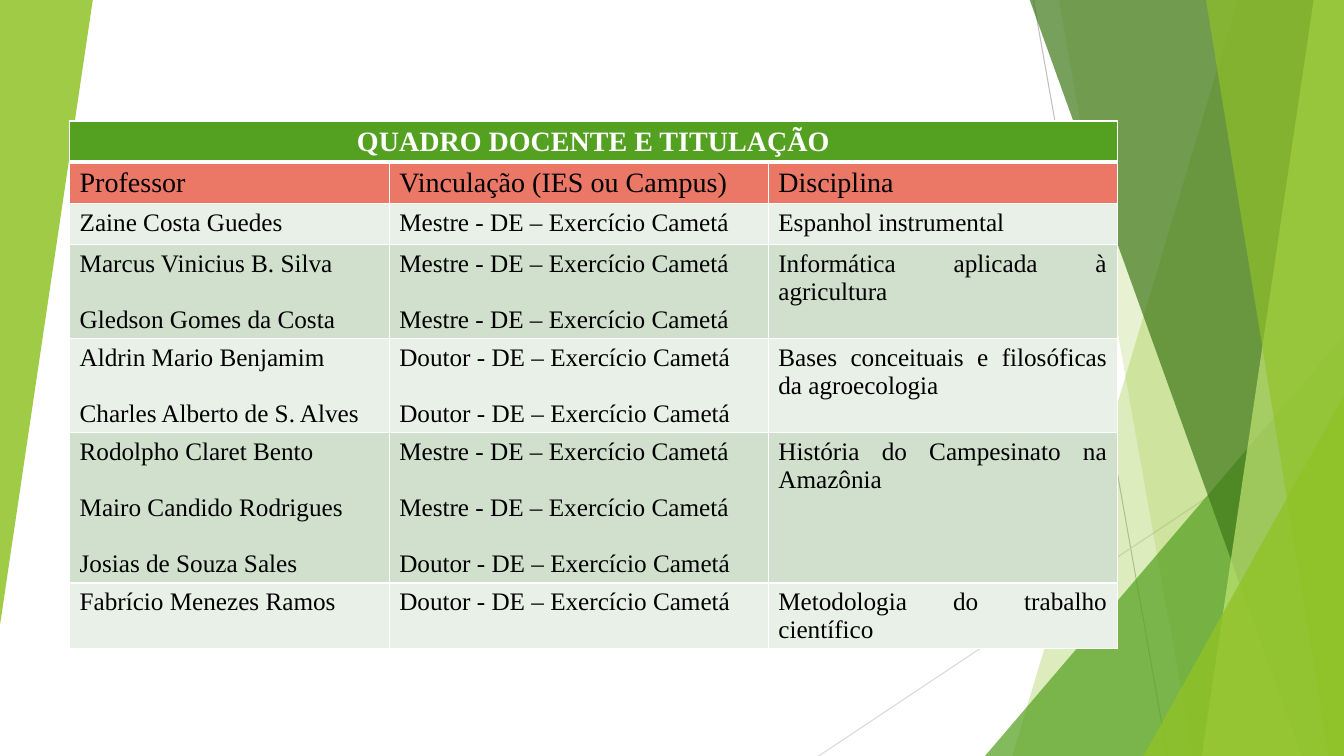
from lxml import etree
from pptx import Presentation
from pptx.dml.color import RGBColor
from pptx.enum.shapes import MSO_CONNECTOR, MSO_SHAPE
from pptx.enum.text import PP_ALIGN
from pptx.oxml import parse_xml
from pptx.oxml.ns import nsdecls, qn
from pptx.util import Inches, Pt

WHITE = RGBColor(0xFF, 0xFF, 0xFF)
BLACK = RGBColor(0x00, 0x00, 0x00)
LIME = RGBColor(0x90, 0xC2, 0x26)
PALE_LIME = RGBColor(0xC0, 0xE4, 0x74)
GREEN = RGBColor(0x54, 0xA0, 0x21)
DARK_GREEN = RGBColor(0x3F, 0x78, 0x19)
CORAL = RGBColor(0xEB, 0x77, 0x66)
BAND_LIGHT = RGBColor(0xE9, 0xF0, 0xE8)
BAND_DARK = RGBColor(0xD1, 0xDF, 0xCD)
GRAY = RGBColor(0xBF, 0xBF, 0xBF)
LIGHT_GRAY = RGBColor(0xD9, 0xD9, 0xD9)

WIDTH, HEIGHT, TOP = 13.33, 7.5, -0.01
MESTRE = "Mestre - DE – Exercício Cametá"
DOUTOR = "Doutor - DE – Exercício Cametá"

HEADINGS = ["Professor", "Vinculação (IES ou Campus)", "Disciplina"]
# Professors, their degrees, subject
STAFF = [
    (["Zaine Costa Guedes"], [MESTRE], "Espanhol instrumental"),
    (["Marcus Vinicius B. Silva", "Gledson Gomes da Costa"],
     [MESTRE, MESTRE], "Informática aplicada à agricultura"),
    (["Aldrin Mario Benjamim", "Charles Alberto de S. Alves"],
     [DOUTOR, DOUTOR], "Bases conceituais e filosóficas da agroecologia"),
    (["Rodolpho Claret Bento", "Mairo Candido Rodrigues", "Josias de Souza Sales"],
     [MESTRE, MESTRE, DOUTOR], "História do Campesinato na Amazônia"),
    (["Fabrício Menezes Ramos"], [DOUTOR], "Metodologia do trabalho científico"),
]
COL_WIDTHS = [3.17, 3.76, 3.46]
ROW_HEIGHTS = [0.41, 0.41, 0.41, 0.93, 0.93, 1.49, 0.65]


class SlideBuilder:
    font = "Times New Roman"

    def __init__(self, slide):
        self.s = slide

    def line(self, start, end, color):
        ends = [Inches(v) for v in (*start, *end)]
        ln = self.s.shapes.add_connector(MSO_CONNECTOR.STRAIGHT, *ends)
        ln.line.color.rgb = color
        ln.line.width = Pt(0.75)
        etree.SubElement(ln._element.spPr, qn("a:effectLst"))

    def paint(self, sp, color, opacity):
        sp.shadow.inherit = False
        sp.line.fill.background()
        sp.fill.solid()
        sp.fill.fore_color.rgb = color
        clr = sp._element.spPr.find(qn("a:solidFill"))[0]
        etree.SubElement(clr, qn("a:alpha")).set("val", str(opacity * 1000))

    def facet(self, top_x, bottom_x, color, opacity):
        """Band from a slanted left edge to the right side of the slide."""
        pts = [(top_x, TOP), (WIDTH, TOP), (WIDTH, HEIGHT), (bottom_x, HEIGHT)]
        pts = [(Inches(x), Inches(y)) for x, y in pts]
        fb = self.s.shapes.build_freeform(*pts[0])
        fb.add_line_segments(pts[1:], close=True)
        self.paint(fb.convert_to_shape(), color, opacity)

    def triangle(self, box, color, opacity, rotation=0):
        sp = self.s.shapes.add_shape(MSO_SHAPE.ISOSCELES_TRIANGLE,
                                     *[Inches(v) for v in box])
        sp.adjustments[0] = 1
        sp.rotation = rotation
        self.paint(sp, color, opacity)

    def table(self, left, top, widths, heights):
        box = [Inches(v) for v in (left, top, sum(widths), sum(heights))]
        tbl = self.s.shapes.add_table(len(heights), len(widths), *box).table
        tbl.first_row = tbl.horz_banding = False
        for col, width in zip(tbl.columns, widths):
            col.width = Inches(width)
        for row, height in zip(tbl.rows, heights):
            row.height = Inches(height)
        return tbl

    def borders(self, cell, top=1, bottom=1):
        tcPr = cell._tc.get_or_add_tcPr()
        for side, width in {"L": 1, "R": 1, "T": top, "B": bottom}.items():
            tcPr.append(parse_xml(
                f'<a:ln{side} {nsdecls("a")} w="{Pt(width)}"><a:solidFill>'
                f'<a:srgbClr val="{WHITE}"/></a:solidFill></a:ln{side}>'))

    def cell(self, cell, lines, fill, size=18, color=BLACK, bold=False,
             align=PP_ALIGN.JUSTIFY):
        cell.fill.solid()
        cell.fill.fore_color.rgb = fill
        tf = cell.text_frame
        style = {"name": self.font, "size": Pt(size), "bold": bold}
        for i, text in enumerate(lines):
            p = tf.add_paragraph() if i else tf.paragraphs[0]
            p.alignment = align
            if i:
                p.space_before = Pt(20)
            r = p.add_run()
            r.text = text
            for name, value in style.items():
                setattr(r.font, name, value)
            r.font.color.rgb = color


def main():
    prs = Presentation()
    prs.slide_width, prs.slide_height = Inches(WIDTH), Inches(HEIGHT)
    b = SlideBuilder(prs.slides.add_slide(prs.slide_layouts[6]))

    # Background facets
    b.line((10.25, 0), (11.58, HEIGHT), GRAY)
    b.line((WIDTH, 4.03), (8.12, HEIGHT), LIGHT_GRAY)
    b.facet(12.28, 10.04, LIME, 30)
    b.facet(10.5, 11.83, LIME, 20)
    b.triangle((9.77, 3.33, 3.56, 4.17), GREEN, 72)
    b.facet(10.21, 12.91, DARK_GREEN, 70)
    b.facet(13.03, 11.92, PALE_LIME, 70)
    b.facet(11.96, 13.18, LIME, 65)
    b.triangle((11.34, 3.93, 1.99, 3.57), LIME, 80)
    b.triangle((0, 0, 0.92, 6.2), LIME, 85, rotation=180)

    # Table frame and borders
    tbl = b.table(0.69, 1.2, COL_WIDTHS, ROW_HEIGHTS)
    for i in range(len(ROW_HEIGHTS)):
        for j in range(len(COL_WIDTHS)):
            b.borders(tbl.cell(i, j), top=3 if i == 1 else 1,
                      bottom=3 if i == 0 else 1)

    # Heading rows
    tbl.cell(0, 0).merge(tbl.cell(0, 2))
    b.cell(tbl.cell(0, 0), ["QUADRO DOCENTE E TITULAÇÃO"], GREEN, size=20,
           color=WHITE, bold=True, align=PP_ALIGN.CENTER)
    for j, heading in enumerate(HEADINGS):
        b.cell(tbl.cell(1, j), [heading], CORAL, size=20)

    # Staff rows in alternating bands
    for i, (names, degrees, subject) in enumerate(STAFF):
        fill = BAND_DARK if i % 2 else BAND_LIGHT
        for j, lines in enumerate([names, degrees, [subject]]):
            b.cell(tbl.cell(i + 2, j), lines, fill)

    prs.save("out.pptx")


if __name__ == "__main__":
    main()
